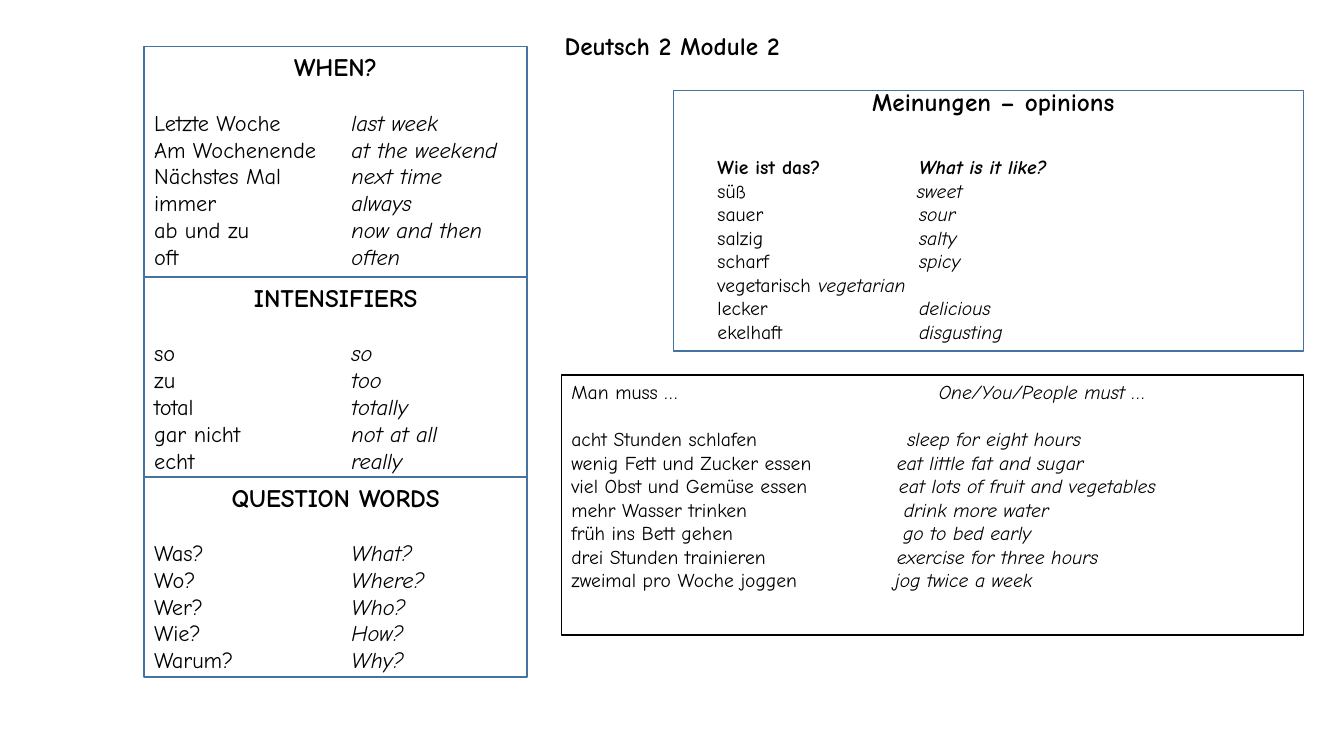
"""Build a German vocabulary slide with word lists in outlined panels."""
from dataclasses import dataclass

from lxml.etree import SubElement
from pptx import Presentation
from pptx.dml.color import RGBColor
from pptx.enum.shapes import MSO_SHAPE
from pptx.enum.text import PP_ALIGN
from pptx.oxml.ns import qn
from pptx.util import Pt

FONT = "Comic Neue"
COLORS = {"text": "000000", "panel": "43739E", "frame": "000000", "paper": "FFFFFF"}
HEADING_SIZE = 18


@dataclass
class Box:
    left: float
    top: float
    width: float
    height: float


@dataclass
class Entry:
    german: str
    english: str
    tab: float
    bold: bool = False
    gap: float = 0


@dataclass
class Panel:
    heading: str
    box: Box
    words: list[tuple[str, str]]


PANEL_LEFT, PANEL_WIDTH, PANEL_TAB = 103, 273.6, 141

PANELS = [
    Panel("WHEN?", Box(PANEL_LEFT, 33.4, PANEL_WIDTH, 164.6), [
        ("Letzte Woche", "last week"),
        ("Am Wochenende", "at the weekend"),
        ("Nächstes Mal", "next time"),
        ("immer", "always"),
        ("ab und zu", "now and then"),
        ("oft", "often"),
    ]),
    Panel("INTENSIFIERS", Box(PANEL_LEFT, 198, PANEL_WIDTH, 143), [
        ("so", "so"),
        ("zu", "too"),
        ("total", "totally"),
        ("gar nicht", "not at all"),
        ("echt", "really"),
    ]),
    Panel("QUESTION WORDS", Box(PANEL_LEFT, 340.6, PANEL_WIDTH, 143), [
        ("Was?", "What?"),
        ("Wo?", "Where?"),
        ("Wer?", "Who?"),
        ("Wie?", "How?"),
        ("Warum?", "Why?"),
    ]),
]

OPINIONS = [
    Entry("Wie ist das?", "What is it like?", 144, bold=True),
    Entry("süß", "sweet", 142.5),
    Entry("sauer", "sour", 144),
    Entry("salzig", "salty", 144),
    Entry("scharf", "spicy", 144),
    Entry("vegetarisch", "vegetarian", 72),
    Entry("lecker", "delicious", 144),
    Entry("ekelhaft", "disgusting", 144),
]

DUTIES = [
    Entry("Man muss …", "One/You/People must …", 262.5),
    Entry("acht Stunden schlafen", "sleep for eight hours", 240, gap=16.8),
    Entry("wenig Fett und Zucker essen", "eat little fat and sugar", 232.5),
    Entry("viel Obst und Gemüse essen", "eat lots of fruit and vegetables", 234),
    Entry("mehr Wasser trinken", "drink more water", 237.5),
    Entry("früh ins Bett gehen", "go to bed early", 237),
    Entry("drei Stunden trainieren", "exercise for three hours", 232.5),
    Entry("zweimal pro Woche joggen", "jog twice a week", 231),
]


def place(box: Box) -> tuple:
    return Pt(box.left), Pt(box.top), Pt(box.width), Pt(box.height)


def add_frame(s, box: Box, line: str, fill: str | None = None) -> None:
    sp = s.shapes.add_shape(MSO_SHAPE.RECTANGLE, *place(box))
    sp.shadow.inherit = False
    if fill:
        sp.fill.solid()
        sp.fill.fore_color.rgb = RGBColor.from_string(COLORS[fill])
    else:
        sp.fill.background()
    sp.line.color.rgb = RGBColor.from_string(COLORS[line])
    sp.line.width = Pt(1)


def style(r, size: float, bold: bool = False, italic: bool = False) -> None:
    r.font.name = FONT
    r.font.size = Pt(size)
    r.font.bold = bold
    r.font.italic = italic
    r.font.color.rgb = RGBColor.from_string(COLORS["text"])


def add_text(s, box: Box, size: float, entries: list[Entry],
             heading: str = "", wrap: bool = True) -> None:
    tf = s.shapes.add_textbox(*place(box)).text_frame
    tf.word_wrap = wrap
    p = tf.paragraphs[0]
    if heading:
        p.text = heading
        p.alignment = PP_ALIGN.CENTER
        style(p.runs[0], HEADING_SIZE, bold=True)
    for i, entry in enumerate(entries):
        if heading or i:
            p = tf.add_paragraph()
        tabs = SubElement(p._p.get_or_add_pPr(), qn("a:tabLst"))
        SubElement(tabs, qn("a:tab"), pos=str(Pt(entry.tab)), algn="l")
        if entry.gap:
            p.space_before = Pt(entry.gap)
        p.text = entry.german
        style(p.runs[0], size, entry.bold)
        r = p.add_run()
        r.text = "\t" + entry.english
        style(r, size, entry.bold, italic=True)


def main() -> None:
    prs = Presentation()
    prs.slide_width, prs.slide_height = Pt(960), Pt(540)
    s = prs.slides.add_slide(prs.slide_layouts[6])

    duties_box = Box(401, 267.8, 530, 185.8)
    add_frame(s, duties_box, "frame", "paper")
    add_text(s, duties_box, 14, DUTIES)

    for panel in PANELS:
        add_frame(s, panel.box, "panel")
        entries = [Entry(german, english, PANEL_TAB, gap=0 if i else 19.2)
                   for i, (german, english) in enumerate(panel.words)]
        add_text(s, panel.box, 16, entries, panel.heading)

    add_frame(s, Box(481, 64.8, 450, 185.8), "panel")
    add_text(s, Box(484, 58.3, 451, 48), 14, [], "Meinungen – opinions")
    add_text(s, Box(505.4, 107.3, 334, 143), 14, OPINIONS)
    add_text(s, Box(388, 18, 184.3, 29), 14, [], "Deutsch 2 Module 2", wrap=False)

    prs.save("out.pptx")


if __name__ == "__main__":
    main()
